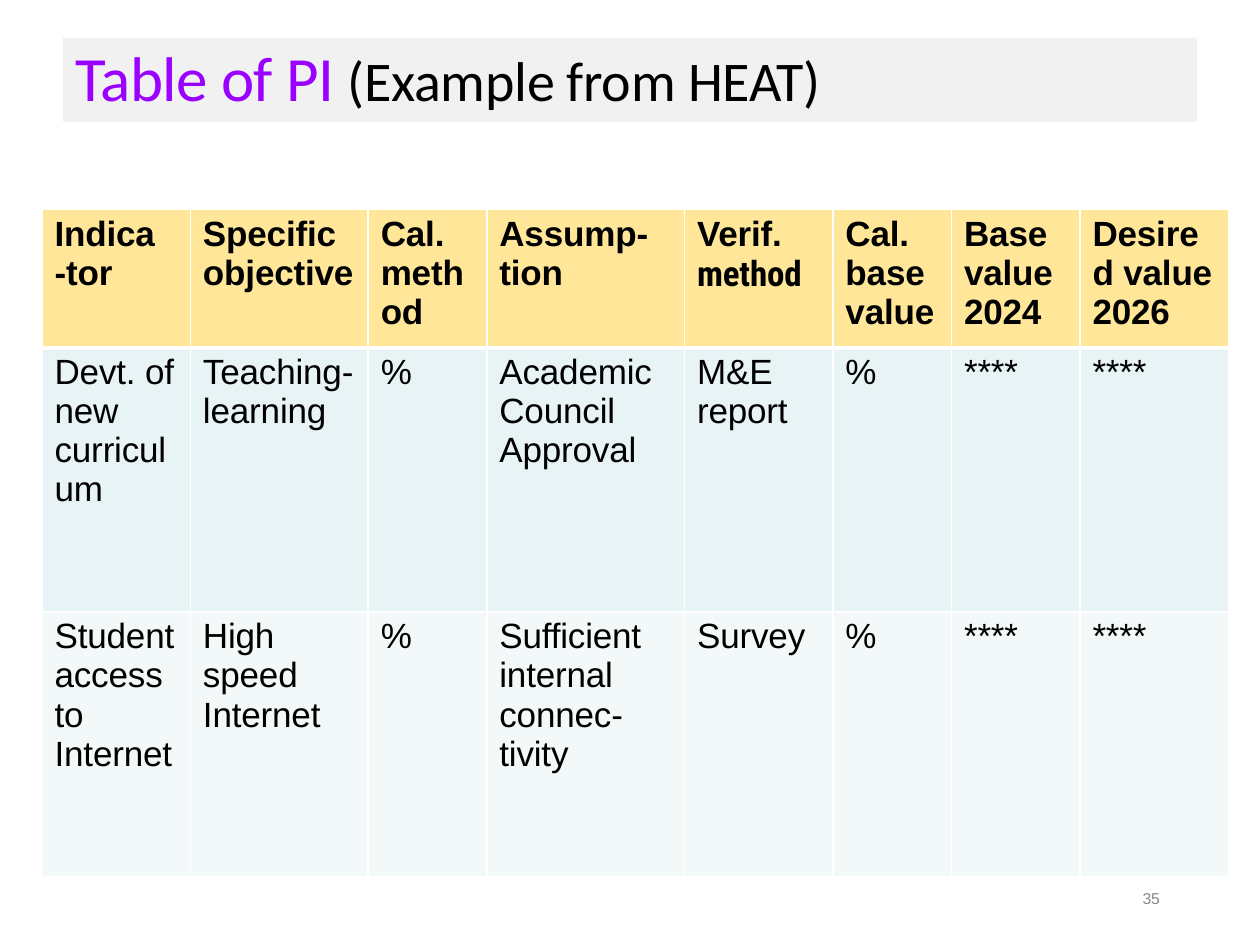
"""Build a slide with a table of performance indicators."""
from lxml.etree import SubElement
from pptx import Presentation
from pptx.dml.color import RGBColor as RGB
from pptx.enum.shapes import MSO_SHAPE as Shape
from pptx.enum.text import MSO_ANCHOR as Anchor, PP_ALIGN as Align
from pptx.oxml.ns import qn
from pptx.util import Pt

COLORS = {
    "accent": "9900FF", "text": "000000", "banner": "F1F1F1", "number": "888888",
    "header": "FFE699", "first": "E7F3F4", "second": "F3F8F9", "border": "FFFFFF",
}
TITLE = [("Table of PI ", 36, "accent", -0.3), ("(Example from HEAT)", 32, "text", -0.2)]
PAGE_NUMBER = "35"
ROWS = [
    ("header", 79, ["Indica\n-tor", "Specific objective", "Cal. meth od", "Assump- tion",
                    "Verif.\nmethod", "Cal. base value", "Base value 2024",
                    "Desire d value 2026"]),
    ("first", 151, ["Devt. of new curricul um", "Teaching- learning", "%",
                    "Academic Council Approval", "M&E report", "%", "****", "****"]),
    ("second", 151, ["Student access to Internet", "High speed Internet", "%",
                     "Sufficient internal connec- tivity", "Survey", "%", "****", "****"]),
]
COLUMN_WIDTHS = [84.8, 101.6, 67.8, 113, 84.8, 67.8, 73.4, 84.8]
TABLE_LEFT, TABLE_TOP = 24, 119.8
INDENT = 7.2
CONDENSED_WORD = "method"


def color(name):
    return RGB.from_string(COLORS[name])


def style(font, name, size, color_name, bold=False):
    font.name, font.size, font.bold = name, Pt(size), bold
    font.color.rgb = color(color_name)


def track(run, points):
    run.font._element.set("spc", str(round(points * 100)))


def set_margins(frame, left=0, top=0):
    frame.margin_left, frame.margin_top = Pt(left), Pt(top)
    frame.margin_right = frame.margin_bottom = Pt(0)


def set_borders(cell, top, bottom):
    properties = cell._tc.get_or_add_tcPr()
    for edge, width in (("L", 1), ("R", 1), ("T", top), ("B", bottom)):
        line = SubElement(properties, qn(f"a:ln{edge}"), w=str(Pt(width)))
        SubElement(SubElement(line, qn("a:solidFill")), qn("a:srgbClr"), val=COLORS["border"])


def add_title(slide):
    banner = slide.shapes.add_shape(Shape.RECTANGLE, Pt(36), Pt(21.6), Pt(648), Pt(48))
    banner.shadow.inherit = False
    banner.fill.solid()
    banner.fill.fore_color.rgb = color("banner")
    banner.line.fill.background()
    frame = banner.text_frame
    set_margins(frame, INDENT)
    frame.word_wrap, frame.vertical_anchor = True, Anchor.MIDDLE
    heading = frame.paragraphs[0]
    heading.alignment, heading.line_spacing = Align.LEFT, Pt(39.4)
    for words, size, color_name, tracking in TITLE:
        run = heading.add_run()
        run.text = words
        style(run.font, "Calibri", size, color_name)
        track(run, tracking)


def fill_cell(cell, words, row_name):
    is_header = row_name == "header"
    set_margins(cell, INDENT, 3)
    set_borders(cell, 3 if row_name == "first" else 1, 3 if is_header else 1)
    cell.fill.solid()
    cell.fill.fore_color.rgb = color(row_name)
    cell.text = words
    for position, paragraph in enumerate(cell.text_frame.paragraphs):
        face = "Roboto Condensed" if paragraph.text == CONDENSED_WORD else "Arial"
        style(paragraph.font, face, 20, "text", is_header)
        paragraph.space_before = Pt(0 if position else 3)
        track(paragraph.runs[0], -0.1)


def add_indicators(slide):
    heights = [height for _, height, _ in ROWS]
    table = slide.shapes.add_table(
        len(ROWS), len(COLUMN_WIDTHS), Pt(TABLE_LEFT), Pt(TABLE_TOP),
        Pt(sum(COLUMN_WIDTHS)), Pt(sum(heights))).table
    for column, width in zip(table.columns, COLUMN_WIDTHS):
        column.width = Pt(width)
    for row, (row_name, height, entries) in zip(table.rows, ROWS):
        row.height = Pt(height)
        for cell, words in zip(row.cells, entries):
            fill_cell(cell, words, row_name)


def add_page_number(slide):
    frame = slide.shapes.add_textbox(Pt(650), Pt(495.4), Pt(30), Pt(26)).text_frame
    set_margins(frame, 3, 13.5)
    frame.word_wrap = True
    number = frame.paragraphs[0]
    number.text = PAGE_NUMBER
    style(number.font, "Arial", 9, "number")
    track(number.runs[0], -0.2)


def main():
    deck = Presentation()
    deck.slide_width, deck.slide_height = Pt(720), Pt(540)
    slide = deck.slides.add_slide(deck.slide_layouts[6])
    add_title(slide)
    add_indicators(slide)
    add_page_number(slide)
    deck.save("out.pptx")


if __name__ == "__main__":
    main()
